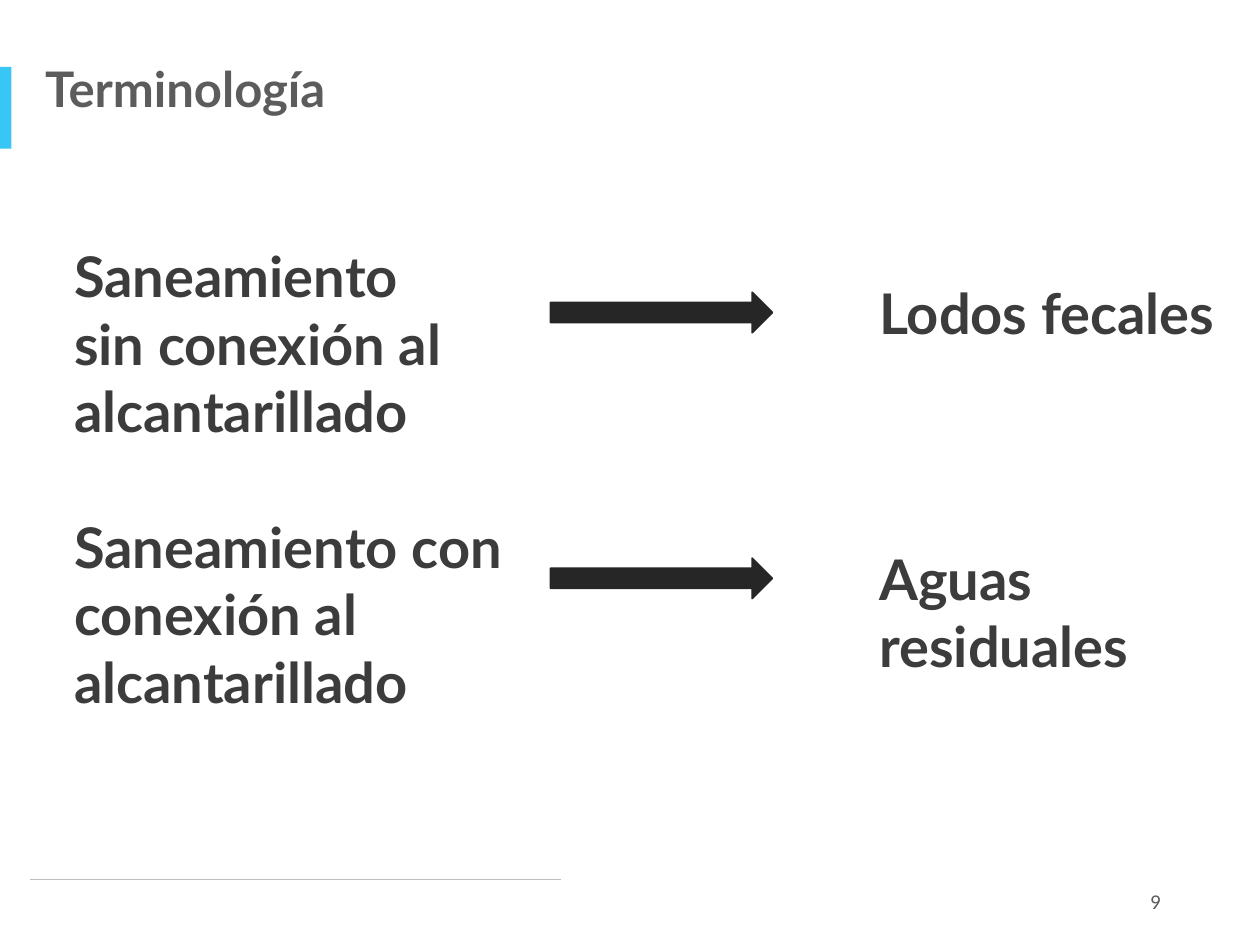
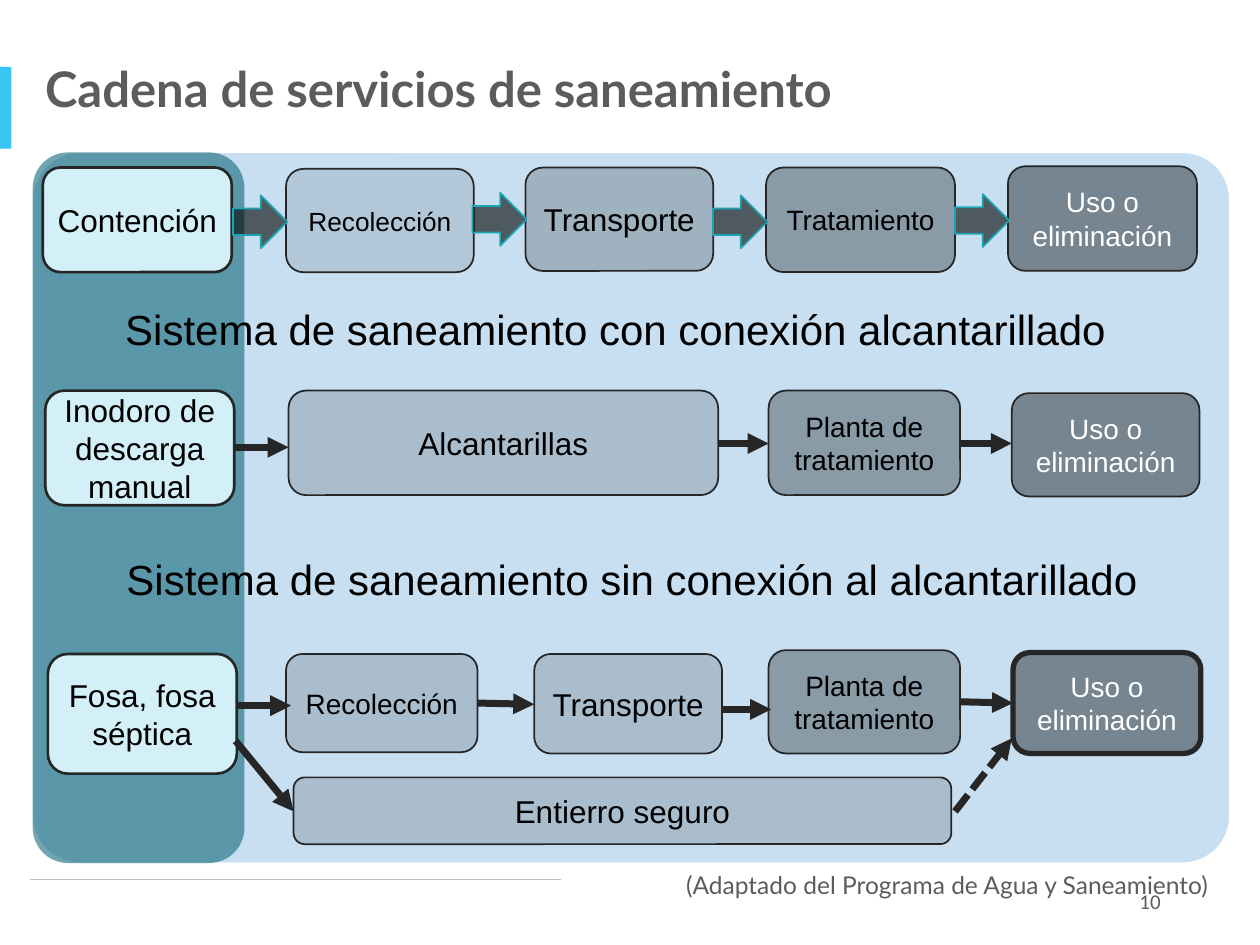
from lxml.etree import SubElement
from pptx import Presentation
from pptx.dml.color import RGBColor
from pptx.enum.dml import MSO_LINE
from pptx.enum.shapes import MSO_CONNECTOR, MSO_SHAPE
from pptx.enum.text import MSO_ANCHOR, PP_ALIGN
from pptx.oxml.ns import qn
from pptx.util import Inches, Pt

DARK, GREY, BLACK, WHITE = "262626", "5C5C5C", "000000", "FFFFFF"
INK, CYAN, RULE, PALE, TEAL = "3C3C3C", "38C6F4", "BFBFBF", "D3EFF8", "1BA5B2"
rgb = RGBColor.from_string


def add_shape(s, kind, at, fill, alpha=100, line=None, width=1):
    sp = s.shapes.add_shape(kind, *map(Inches, at))
    sp.shadow.inherit = False
    sp.fill.solid()
    sp.fill.fore_color.rgb = rgb(fill)
    if alpha < 100:
        clr = sp.fill._xPr.find(qn("a:solidFill"))[0]
        SubElement(clr, qn("a:alpha"), val=str(alpha * 1000))
    if line:
        sp.line.color.rgb = rgb(line)
        sp.line.width = Pt(width)
    else:
        sp.line.fill.background()
    return sp


def add_text(sp, text, size, color, font="Arial", bold=False, align=PP_ALIGN.LEFT, anchor=MSO_ANCHOR.TOP):
    tf = sp.text_frame
    tf.word_wrap = True
    tf.vertical_anchor = anchor
    p = tf.paragraphs[0]
    p.alignment = align
    r = p.add_run()
    r.text = text
    r.font.size = Pt(size)
    r.font.name = font
    r.font.bold = bold
    r.font.color.rgb = rgb(color)
    return p


prs = Presentation()
prs.slide_width, prs.slide_height = Inches(10), Inches(7.5)

slides = []
lines = []
for title, number in [("Terminología", "9"), ("Cadena de servicios de saneamiento", "10")]:
    s = prs.slides.add_slide(prs.slide_layouts[6])
    slides.append(s)
    add_shape(s, MSO_SHAPE.RECTANGLE, (0, 0.53, 0.09, 0.65), CYAN)
    lines.append((s, (0.24, 6.98, 4.45, 6.98), RULE, 1, None))
    tb = s.shapes.add_textbox(*map(Inches, (0.26, 0.47, 8.3, 0.45)))
    add_text(tb, title, 28, GREY, "Lato", True).line_spacing = 0.9
    tb = s.shapes.add_textbox(*map(Inches, (7.06, 6.95, 2.25, 0.4)))
    add_text(tb, number, 12, GREY, "Calibri", align=PP_ALIGN.RIGHT, anchor=MSO_ANCHOR.MIDDLE)

s = slides[0]
terms = [
    ("Saneamiento sin conexión al alcantarillado", (0.49, 1.87, 3.35, 1.72)),
    ("Saneamiento con conexión al alcantarillado", (0.49, 4.02, 3.88, 1.72)),
    ("Lodos fecales", (6.88, 2.16, 3.12, 0.64)),
    ("Aguas residuales", (6.88, 4.27, 3.12, 0.64)),
]
for text, at in terms:
    add_text(s.shapes.add_textbox(*map(Inches, at)), text, 32, INK, "Lato", True)
for top in (2.32, 4.43):
    add_shape(s, MSO_SHAPE.RIGHT_ARROW, (4.37, top, 1.76, 0.32), DARK, line=DARK)

s = slides[1]
tb = s.shapes.add_textbox(*map(Inches, (4.55, 6.88, 5.14, 0.26)))
p = add_text(tb, "(Adaptado del Programa de Agua y Saneamiento)", 14, GREY, "Lato", align=PP_ALIGN.RIGHT)
p.line_spacing = 0.9
panel = add_shape(s, MSO_SHAPE.ROUNDED_RECTANGLE, (0.26, 1.21, 9.5, 5.64), "0070C0", 22, WHITE, 0.75)
panel.adjustments[0] = 0.066
add_shape(s, MSO_SHAPE.ROUNDED_RECTANGLE, (0.26, 1.21, 1.68, 5.64), "0E6677", 59)

boxes = [
    ("Contención", (0.34, 1.33, 1.5, 0.83), 18, 100, 1.5),
    ("Recolección", (2.27, 1.34, 1.49, 0.82), 15, 10, 1),
    ("Transporte", (4.17, 1.33, 1.49, 0.82), 18, 20, 1),
    ("Tratamiento", (6.08, 1.33, 1.5, 0.83), 16, 30, 1),
    ("Uso o eliminación", (8, 1.32, 1.5, 0.83), 16, 40, 1),
    ("Inodoro de descarga manual", (0.36, 3.1, 1.5, 0.91), 18, 100, 1.5),
    ("Alcantarillas", (2.29, 3.1, 3.41, 0.83), 18, 15, 1),
    ("Planta de tratamiento", (6.1, 3.1, 1.52, 0.83), 16, 30, 1),
    ("Uso o eliminación", (8.03, 3.12, 1.49, 0.82), 16, 40, 1),
    ("Fosa, fosa séptica", (0.38, 5.19, 1.5, 0.95), 18, 100, 1.5),
    ("Recolección", (2.27, 5.19, 1.52, 0.78), 16, 15, 1),
    ("Transporte", (4.24, 5.19, 1.49, 0.79), 18, 15, 1),
    ("Planta de tratamiento", (6.1, 5.16, 1.52, 0.82), 16, 30, 1),
    ("Uso o eliminación", (8.04, 5.18, 1.49, 0.8), 16, 40, 3),
    ("Entierro seguro", (2.33, 6.17, 5.22, 0.53), 18, 15, 1),
]
for text, at, size, alpha, width in boxes:
    fill = PALE if alpha == 100 else BLACK
    sp = add_shape(s, MSO_SHAPE.ROUNDED_RECTANGLE, at, fill, alpha, DARK, width)
    sp.text_frame.margin_left = sp.text_frame.margin_right = 0
    color = WHITE if alpha == 40 else BLACK
    add_text(sp, text, size, color, align=PP_ALIGN.CENTER, anchor=MSO_ANCHOR.MIDDLE)

for left, top in [(1.85, 1.55), (3.75, 1.53), (5.66, 1.55), (7.58, 1.54)]:
    add_shape(s, MSO_SHAPE.RIGHT_ARROW, (left, top, 0.43, 0.42), BLACK, 60, TEAL)

headings = [
    ("Sistema de saneamiento con conexión alcantarillado", 0.26, 2.36),
    ("Sistema de saneamiento sin conexión al alcantarillado", 0.39, 4.34),
]
for text, left, top in headings:
    tb = s.shapes.add_textbox(*map(Inches, (left, top, 9.25, 0.58)))
    add_text(tb, text, 24, BLACK, align=PP_ALIGN.CENTER)

flows = [
    (1.86, 3.55, 2.29, 3.55),
    (5.7, 3.52, 6.1, 3.52),
    (7.62, 3.52, 8.03, 3.52),
    (1.88, 5.6, 2.31, 5.6),
    (3.79, 5.58, 4.24, 5.59),
    (5.73, 5.63, 6.12, 5.63),
    (7.62, 5.57, 8.04, 5.58),
    (1.87, 5.88, 2.33, 6.44),
]
lines += [(s, ends, DARK, 4, MSO_LINE.SOLID) for ends in flows]
lines.append((s, (7.58, 6.44, 8.03, 5.86), DARK, 4, MSO_LINE.SQUARE_DOT))

for s, ends, color, width, dash in lines:
    sp = s.shapes.add_connector(MSO_CONNECTOR.STRAIGHT, *map(Inches, ends))
    sp.line.color.rgb = rgb(color)
    sp.line.width = Pt(width)
    if dash:
        sp.line.dash_style = dash
        SubElement(sp.line._get_or_add_ln(), qn("a:tailEnd"), type="triangle")
    SubElement(sp._element.spPr, qn("a:effectLst"))

prs.save("out.pptx")
